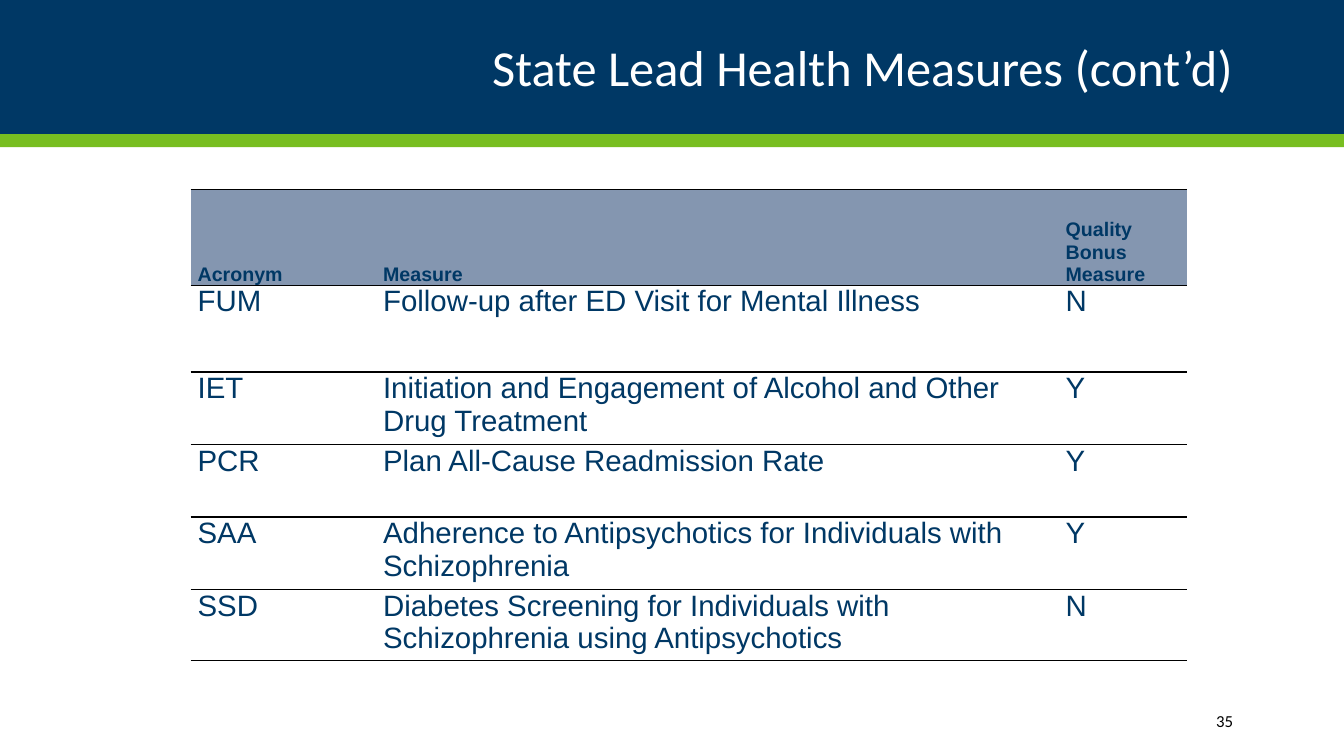
from lxml.etree import SubElement
from pptx import Presentation
from pptx.dml.color import RGBColor
from pptx.enum.shapes import MSO_SHAPE as SHAPE
from pptx.enum.text import MSO_ANCHOR as ANCHOR, PP_ALIGN as ALIGN
from pptx.oxml.ns import qn
from pptx.util import Inches, Pt

TITLE = "State Lead Health Measures (cont’d)"
PAGE = "35"
ROWS = [
    ("Acronym", "Measure", "Quality Bonus Measure"),
    ("FUM", "Follow-up after ED Visit for Mental Illness", "N"),
    ("IET", "Initiation and Engagement of Alcohol and Other Drug Treatment", "Y"),
    ("PCR", "Plan All-Cause Readmission Rate", "Y"),
    ("SAA", "Adherence to Antipsychotics for Individuals with Schizophrenia", "Y"),
    ("SSD", "Diabetes Screening for Individuals with Schizophrenia using Antipsychotics", "N"),
]
WIDTHS = (1.84, 6.77, 1.27)
HEIGHTS = (0.95, 0.86, 0.72, 0.72, 0.72, 0.67)
TIGHT = ("PCR", "SSD")

NAVY = RGBColor(0x00, 0x38, 0x65)
GREEN = RGBColor(0x78, 0xBE, 0x21)
SLATE = RGBColor(0x84, 0x96, 0xB0)
WHITE = RGBColor(0xFF, 0xFF, 0xFF)
BLACK = RGBColor(0x00, 0x00, 0x00)


def style(para, font, size, color, bold=False):
    for run in para.runs:
        run.font.name = font
        run.font.size = Pt(size)
        run.font.bold = bold
        run.font.color.rgb = color


def add_band(slide, top, height, color):
    band = slide.shapes.add_shape(SHAPE.RECTANGLE, 0, Inches(top), Inches(13.33), Inches(height))
    band.shadow.inherit = False
    band.fill.solid()
    band.fill.fore_color.rgb = color
    band.line.fill.background()


def add_label(slide, text, box, size, color, space=1.0):
    frame = slide.shapes.add_textbox(*map(Inches, box)).text_frame
    frame.word_wrap = True
    frame.vertical_anchor = ANCHOR.MIDDLE
    frame.text = text
    para = frame.paragraphs[0]
    para.alignment = ALIGN.RIGHT
    para.line_spacing = space
    style(para, "Calibri", size, color)


def add_rules(cell):
    props = cell._tc.get_or_add_tcPr()
    for place, side in enumerate(("lnL", "lnR", "lnT", "lnB")):
        line = SubElement(props, qn("a:" + side), w=str(Pt(1)))
        if side in ("lnT", "lnB"):
            fill = SubElement(line, qn("a:solidFill"))
            SubElement(fill, qn("a:srgbClr"), val=str(BLACK))
        else:
            SubElement(line, qn("a:noFill"))
        props.insert(place, line)


def fill_cell(cell, text, head, gap):
    cell.margin_left = cell.margin_right = Inches(0.07)
    cell.margin_top = cell.margin_bottom = 0
    cell.vertical_anchor = ANCHOR.BOTTOM if head else ANCHOR.TOP
    if head:
        cell.fill.solid()
        cell.fill.fore_color.rgb = SLATE
    else:
        cell.fill.background()
    add_rules(cell)
    cell.text_frame.text = text
    para = cell.text_frame.paragraphs[0]
    para.space_before = para.space_after = Pt(gap)
    style(para, "Arial", 14 if head else 21, NAVY, head)


def add_grid(slide):
    box = (1.89, 1.88, sum(WIDTHS), sum(HEIGHTS))
    grid = slide.shapes.add_table(len(ROWS), len(WIDTHS), *map(Inches, box)).table
    grid.horz_banding = False
    for col, width in zip(grid.columns, WIDTHS):
        col.width = Inches(width)
    for r, (row, height) in enumerate(zip(ROWS, HEIGHTS)):
        grid.rows[r].height = Inches(height)
        gap = 0 if row[0] in TIGHT else 2
        for c, text in enumerate(row):
            fill_cell(grid.cell(r, c), text, r == 0, gap)


def main():
    deck = Presentation()
    deck.slide_width, deck.slide_height = Inches(13.33), Inches(7.5)
    slide = deck.slides.add_slide(deck.slide_layouts[6])
    add_band(slide, 0, 1.33, NAVY)
    add_band(slide, 1.33, 0.13, GREEN)
    add_label(slide, TITLE, (1, 0.2, 11.33, 1), 36, WHITE, 0.9)
    add_grid(slide)
    add_label(slide, PAGE, (10.83, 6.95, 1.5, 0.4), 12, BLACK)
    deck.save("out.pptx")


if __name__ == "__main__":
    main()
